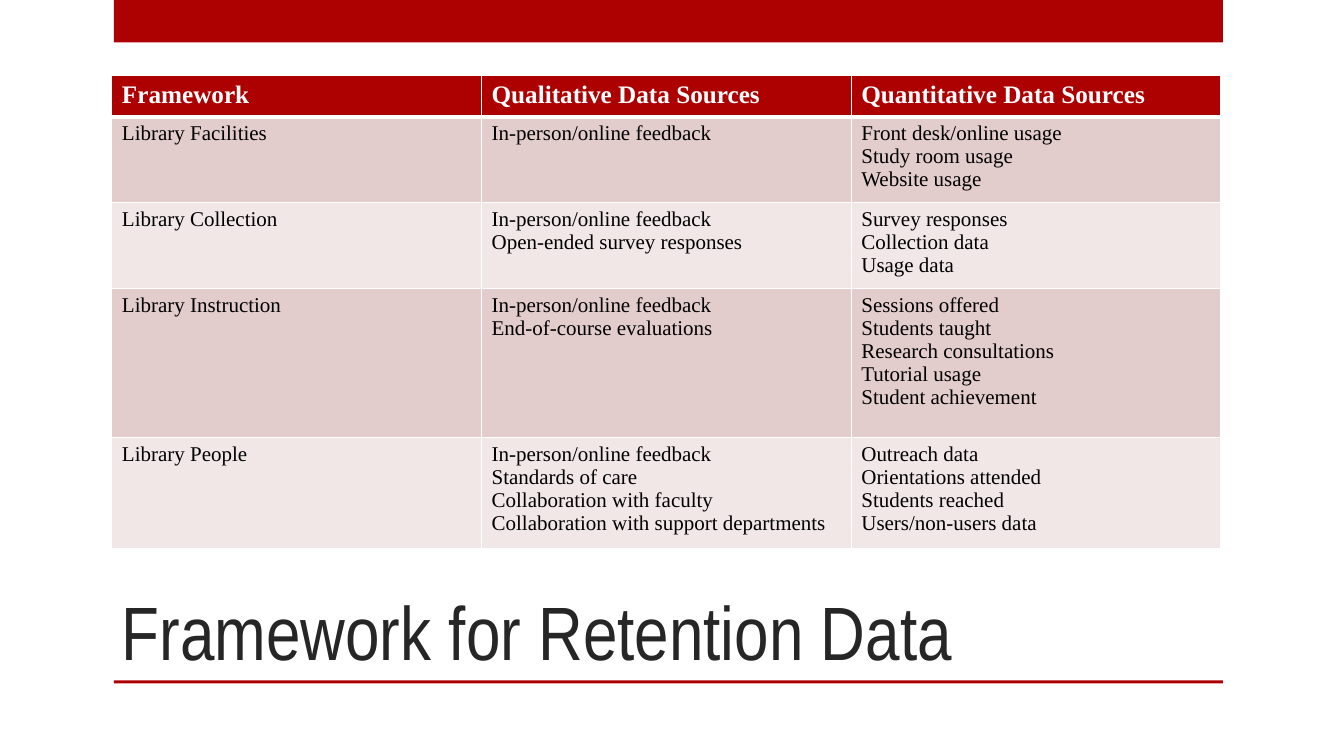
from lxml.etree import SubElement
from pptx import Presentation
from pptx.dml.color import RGBColor
from pptx.enum.shapes import MSO_SHAPE
from pptx.enum.text import MSO_ANCHOR
from pptx.oxml.ns import qn
from pptx.util import Inches, Pt

# Content
TITLE = "Framework for Retention Data"
HEADERS = ["Framework", "Qualitative Data Sources", "Quantitative Data Sources"]
FEEDBACK = "In-person/online feedback"
FRAMEWORK_ROWS = [
    (["Library Facilities"],
     [FEEDBACK],
     ["Front desk/online usage", "Study room usage", "Website usage"]),
    (["Library Collection"],
     [FEEDBACK, "Open-ended survey responses"],
     ["Survey responses", "Collection data", "Usage data"]),
    (["Library Instruction"],
     [FEEDBACK, "End-of-course evaluations"],
     ["Sessions offered", "Students taught", "Research consultations",
      "Tutorial usage", "Student achievement"]),
    (["Library People"],
     [FEEDBACK, "Standards of care", "Collaboration with faculty",
      "Collaboration with support departments"],
     ["Outreach data", "Orientations attended", "Students reached",
      "Users/non-users data"]),
]
ROW_HEIGHTS = [0.41, 0.79, 0.79, 1.48, 1.02]

# Style
RED = RGBColor(0xAD, 0x01, 0x01)
DARK_BAND = RGBColor(0xE3, 0xCC, 0xCC)
LIGHT_BAND = RGBColor(0xF1, 0xE7, 0xE7)
WHITE = RGBColor(0xFF, 0xFF, 0xFF)
BLACK = RGBColor(0, 0, 0)
TITLE_GRAY = RGBColor(0x26, 0x26, 0x26)
TABLE_FONT = "Times New Roman"
TITLE_FONT = "Arial Narrow"


def add_bar(slide, top, height):
    bar = slide.shapes.add_shape(MSO_SHAPE.RECTANGLE, Inches(1.13), Inches(top),
                                 Inches(11), Inches(height))
    bar.shadow.inherit = False
    bar.fill.solid()
    bar.fill.fore_color.rgb = RED
    bar.line.fill.background()


def set_borders(cell, top, bottom):
    properties = cell._tc.get_or_add_tcPr()
    for side, width in (("L", 1), ("R", 1), ("T", top), ("B", bottom)):
        line = SubElement(properties, qn(f"a:ln{side}"), w=str(Pt(width)))
        fill = SubElement(line, qn("a:solidFill"))
        SubElement(fill, qn("a:srgbClr"), val=str(WHITE))


def fill_cell(cell, lines, row_index):
    is_header = row_index == 0
    set_borders(cell, top=3 if row_index == 1 else 1, bottom=3 if is_header else 1)
    cell.fill.solid()
    band = DARK_BAND if row_index % 2 else LIGHT_BAND
    cell.fill.fore_color.rgb = RED if is_header else band
    cell.text = "\n".join(lines)
    for paragraph in cell.text_frame.paragraphs:
        font = paragraph.font
        font.name = TABLE_FONT
        font.size = Pt(18 if is_header else 15)
        font.bold = is_header
        font.color.rgb = WHITE if is_header else BLACK


def add_framework_table(slide):
    rows = [[[header] for header in HEADERS], *FRAMEWORK_ROWS]
    table = slide.shapes.add_table(len(rows), len(HEADERS), Inches(1.11), Inches(0.75),
                                   Inches(11), Inches(sum(ROW_HEIGHTS))).table
    for row_index, row in enumerate(rows):
        table.rows[row_index].height = Inches(ROW_HEIGHTS[row_index])
        for column_index, lines in enumerate(row):
            fill_cell(table.cell(row_index, column_index), lines, row_index)


def add_title(slide):
    box = slide.shapes.add_textbox(Inches(1.11), Inches(5), Inches(9.89), Inches(1.75))
    frame = box.text_frame
    frame.word_wrap = True
    frame.vertical_anchor = MSO_ANCHOR.BOTTOM
    paragraph = frame.paragraphs[0]
    paragraph.text = TITLE
    paragraph.font.name = TITLE_FONT
    paragraph.font.size = Pt(54)
    paragraph.font.color.rgb = TITLE_GRAY


def main():
    presentation = Presentation()
    presentation.slide_width = Inches(13.33)
    presentation.slide_height = Inches(7.5)
    slide = presentation.slides.add_slide(presentation.slide_layouts[6])

    # Top band and title rule
    add_bar(slide, 0, 0.42)
    add_bar(slide, 6.75, 0.03)

    add_title(slide)
    add_framework_table(slide)
    presentation.save("out.pptx")


if __name__ == "__main__":
    main()
